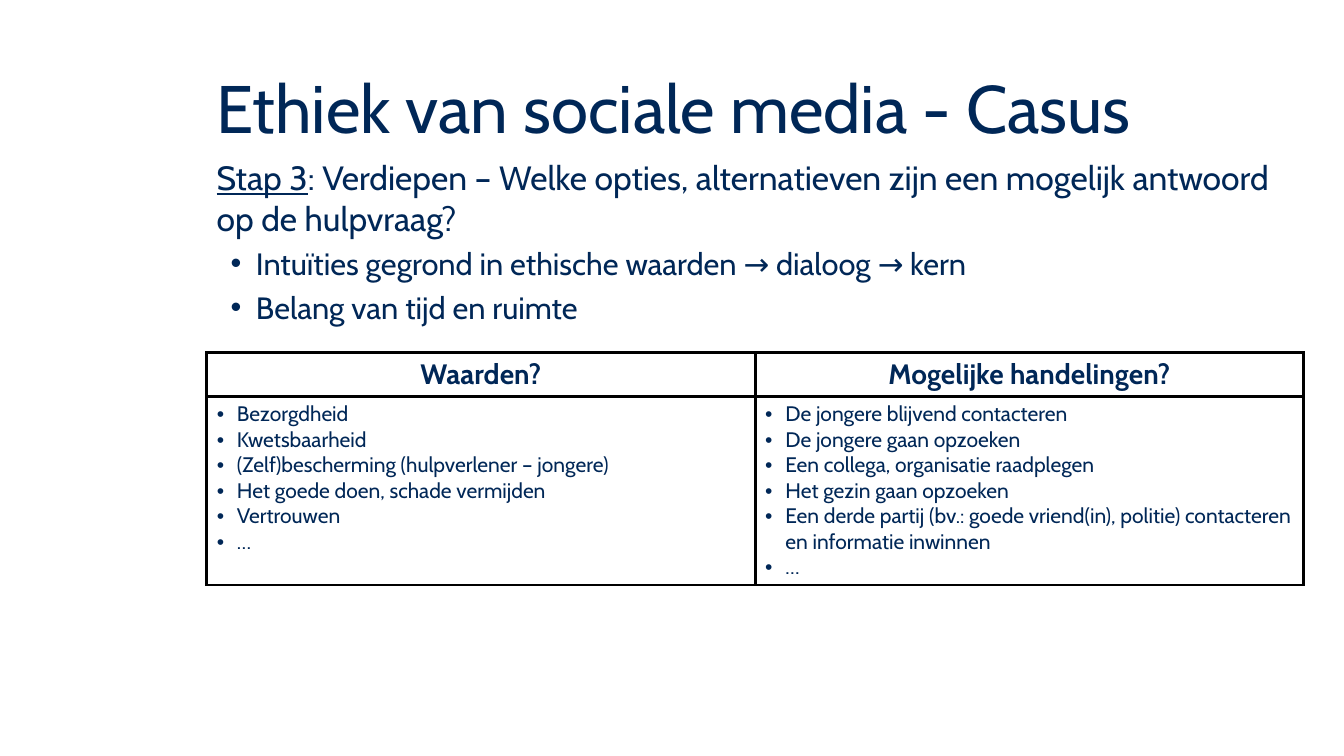
from pptx import Presentation, oxml, util as u
from pptx.dml.color import RGBColor
from pptx.enum import text
from pptx.oxml import ns

NAVY = RGBColor(0x00, 0x27, 0x57)
BLACK = RGBColor(0x00, 0x00, 0x00)
FONT = "Cabin"
SLIDE_WIDTH, SLIDE_HEIGHT = u.Inches(13.33), u.Inches(7.5)
LEFT, COLUMN = u.Inches(2.05), u.Inches(5.44)
HEADER_ROW, LIST_ROW = u.Inches(0.41), u.Inches(1.87)

OPTIONS = [
    ("Waarden?", [
        "Bezorgdheid",
        "Kwetsbaarheid",
        "(Zelf)bescherming (hulpverlener – jongere)",
        "Het goede doen, schade vermijden",
        "Vertrouwen",
        "…",
    ]),
    ("Mogelijke handelingen?", [
        "De jongere blijvend contacteren",
        "De jongere gaan opzoeken",
        "Een collega, organisatie raadplegen",
        "Het gezin gaan opzoeken",
        "Een derde partij (bv.: goede vriend(in), politie) contacteren en informatie inwinnen",
        "…",
    ]),
]
INSIGHTS = [
    "Intuïties gegrond in ethische waarden → dialoog → kern",
    "Belang van tijd en ruimte",
]


def style(paragraph, size, bold=False):
    font = paragraph.font
    font.name, font.size, font.bold = FONT, u.Pt(size), bold
    font.color.rgb = NAVY


def add_bullet(paragraph, margin, hanging):
    properties = paragraph._p.get_or_add_pPr()
    properties.set("marL", str(u.Inches(margin)))
    properties.set("indent", str(-u.Inches(hanging)))
    properties.append(oxml.parse_xml(f'<a:buFont {ns.nsdecls("a")} typeface="Arial"/>'))
    properties.append(oxml.parse_xml(f'<a:buChar {ns.nsdecls("a")} char="•"/>'))


def add_text_frame(slide, top, height):
    frame = slide.shapes.add_textbox(LEFT, top, 2 * COLUMN, height).text_frame
    frame.word_wrap = True
    return frame


def add_title(slide):
    frame = add_text_frame(slide, u.Inches(0.69), u.Inches(0.83))
    frame.vertical_anchor = text.MSO_ANCHOR.MIDDLE
    title = frame.paragraphs[0]
    title.text = "Ethiek van sociale media - Casus"
    title.line_spacing = 0.9
    style(title, 48)


def add_step(slide):
    frame = add_text_frame(slide, u.Inches(1.51), u.Inches(5.19))
    question = frame.paragraphs[0]
    step = question.add_run()
    step.text = "Stap 3"
    step.font.underline = True
    question.add_run().text = (
        ": Verdiepen – Welke opties, alternatieven zijn een mogelijk antwoord op de hulpvraag?"
    )
    style(question, 24)
    for insight in INSIGHTS:
        point = frame.add_paragraph()
        point.text = insight
        point.space_before = u.Pt(5)
        add_bullet(point, 0.39, 0.25)
        style(point, 22)


def frame_cell(cell):
    properties = cell._tc.get_or_add_tcPr()
    for side in ("lnL", "lnR", "lnT", "lnB"):
        properties.append(oxml.parse_xml(
            f'<a:{side} {ns.nsdecls("a")} w="{u.Pt(2.25)}"><a:solidFill>'
            f'<a:srgbClr val="{BLACK}"/></a:solidFill></a:{side}>'
        ))
    cell.fill.background()


def add_options_table(slide):
    table = slide.shapes.add_table(
        2, len(OPTIONS), LEFT, u.Inches(3.5), 2 * COLUMN, HEADER_ROW + LIST_ROW
    ).table
    table.first_row = table.horz_banding = False
    table.rows[0].height, table.rows[1].height = HEADER_ROW, LIST_ROW
    for column, (heading, entries) in enumerate(OPTIONS):
        table.columns[column].width = COLUMN
        header, listing = table.cell(0, column), table.cell(1, column)
        header.text = heading
        header.text_frame.paragraphs[0].alignment = text.PP_ALIGN.CENTER
        style(header.text_frame.paragraphs[0], 20, bold=True)
        listing.text = "\n".join(entries)
        for entry in listing.text_frame.paragraphs:
            add_bullet(entry, 0.2, 0.2)
            style(entry, 15)
        for cell in (header, listing):
            frame_cell(cell)


def main():
    """Build the case slide on the ethics of social media."""
    deck = Presentation()
    deck.slide_width, deck.slide_height = SLIDE_WIDTH, SLIDE_HEIGHT
    slide = deck.slides.add_slide(deck.slide_layouts[6])
    add_title(slide)
    add_step(slide)
    add_options_table(slide)
    deck.save("out.pptx")


if __name__ == "__main__":
    main()
